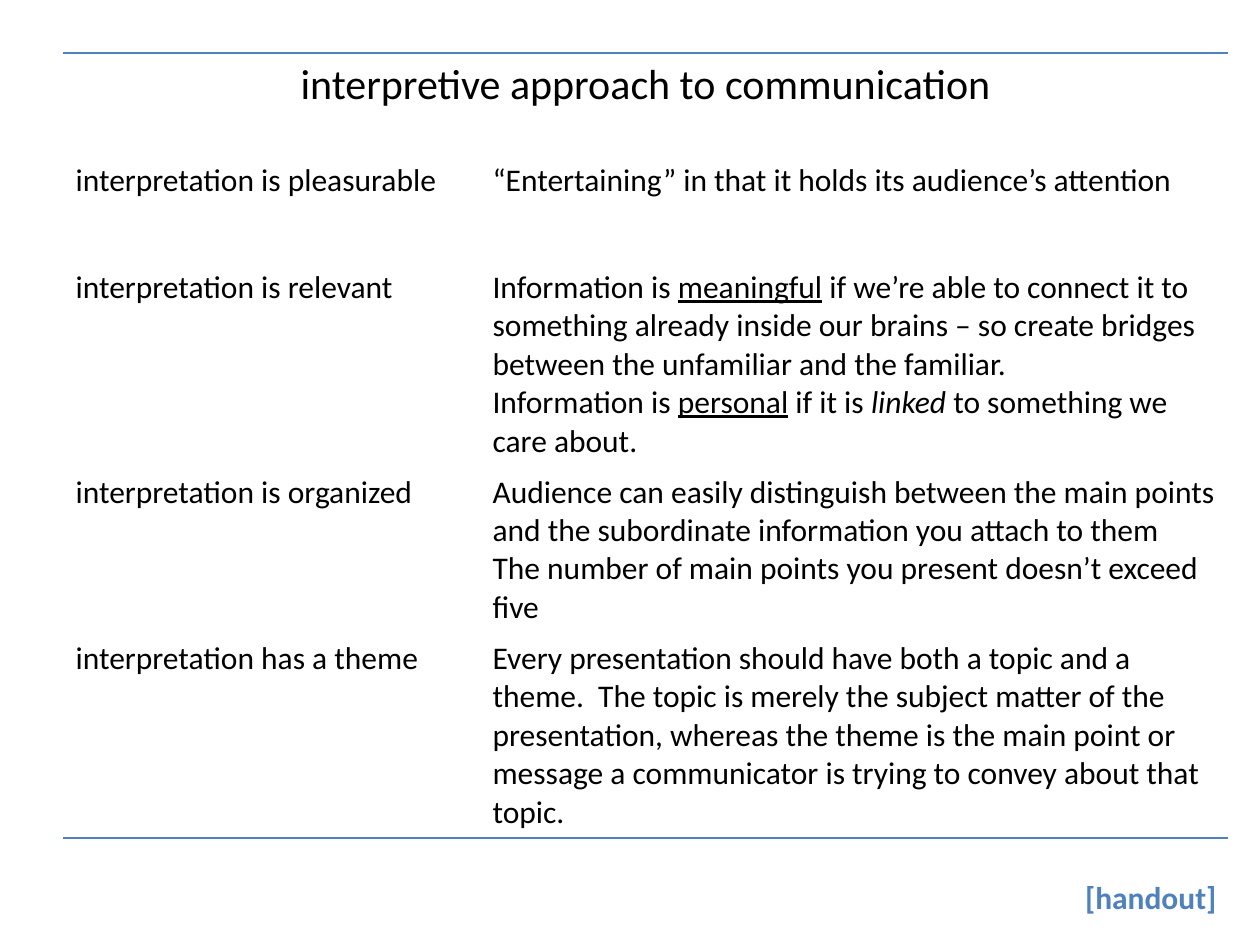
from dataclasses import dataclass

from lxml import etree
from pptx import Presentation
from pptx import util as u
from pptx.dml.color import RGBColor
from pptx.enum import text
from pptx.oxml import ns


@dataclass(frozen=True)
class Theme:
    font: str = "Calibri"
    ink: str = "000000"
    accent: str = "4F81BD"
    title_size: int = 24
    body_size: int = 18
    rule_width: int = 1


theme = Theme()
EMU_PER_PX = 914400 / 126
NO_STYLE_TABLE = "{2D5ABB26-0587-4C30-8999-92F81FD0307C}"


def px(length):
    return u.Emu(round(length * EMU_PER_PX))


def write(frame, paragraphs, size=theme.body_size, color=theme.ink,
          align=text.PP_ALIGN.LEFT):
    """Fill a frame; each paragraph is a list of (wording, style) runs."""
    for index, runs in enumerate(paragraphs):
        paragraph = frame.paragraphs[0] if index == 0 else frame.add_paragraph()
        paragraph.alignment = align
        paragraph.font.name = theme.font
        paragraph.font.size = u.Pt(size)
        paragraph.font.color.rgb = RGBColor.from_string(color)
        for wording, style in runs:
            run = paragraph.add_run()
            run.text = wording
            if style:
                setattr(run.font, style, True)


# Content: one principle per row
principles = [
    ("interpretation is pleasurable", [
        [("“Entertaining” in that it holds its audience’s attention", None)],
    ]),
    ("interpretation is relevant", [
        [("Information is ", None), ("meaningful", "underline"),
         (" if we’re able to connect it to something already inside our brains"
          " – so create bridges between the unfamiliar and the familiar.", None)],
        [("Information is ", None), ("personal", "underline"),
         (" if it is ", None), ("linked", "italic"),
         (" to something we care about.", None)],
    ]),
    ("interpretation is organized", [
        [("Audience can easily distinguish between the main points and the "
          "subordinate information you attach to them", None)],
        [("The number of main points you present doesn’t exceed five", None)],
    ]),
    ("interpretation has a theme", [
        [("Every presentation should have both a topic and a theme.  The topic is "
          "merely the subject matter of the presentation, whereas the theme is the "
          "main point or message a communicator is trying to convey about that "
          "topic.", None)],
    ]),
]

presentation = Presentation()
presentation.slide_width = px(1260)
presentation.slide_height = px(945)
slide = presentation.slides.add_slide(presentation.slide_layouts[6])

# Table grid
column_widths = [417, 748]
row_heights = [102, 107, 164, 164, 164]
table_shape = slide.shapes.add_table(
    len(row_heights), len(column_widths), px(63), px(53),
    px(sum(column_widths)), px(sum(row_heights)))
table = table_shape.table
table.first_row = False
table.horz_banding = False
table._tbl.tblPr.find(ns.qn("a:tableStyleId")).text = NO_STYLE_TABLE
for column, width in zip(table.columns, column_widths):
    column.width = px(width)
for row, height in zip(table.rows, row_heights):
    row.height = px(height)
for cell in table.iter_cells():
    cell.fill.background()

# Heading row and principle rows
heading = table.cell(0, 0)
heading.merge(table.cell(0, 1))
write(heading.text_frame, [[("interpretive approach to communication", None)]],
      size=theme.title_size, align=text.PP_ALIGN.CENTER)
for row_index, (name, explanation) in enumerate(principles, start=1):
    write(table.cell(row_index, 0).text_frame, [[(name, None)]])
    write(table.cell(row_index, 1).text_frame, explanation)

# Rules above and below the table
for row_index, side in ((0, "a:lnT"), (len(principles), "a:lnB")):
    for column_index in range(len(column_widths)):
        properties = table.cell(row_index, column_index)._tc.get_or_add_tcPr()
        line = etree.Element(ns.qn(side), w=str(u.Pt(theme.rule_width)))
        fill = etree.SubElement(line, ns.qn("a:solidFill"))
        etree.SubElement(fill, ns.qn("a:srgbClr"), val=theme.accent)
        properties.insert(0, line)

# Handout note
note = slide.shapes.add_textbox(px(609), px(872), px(620), px(50))
note.text_frame.word_wrap = True
note.text_frame.auto_size = text.MSO_AUTO_SIZE.SHAPE_TO_FIT_TEXT
write(note.text_frame, [[("[handout]", "bold")]],
      color=theme.accent, align=text.PP_ALIGN.RIGHT)

presentation.save("out.pptx")
